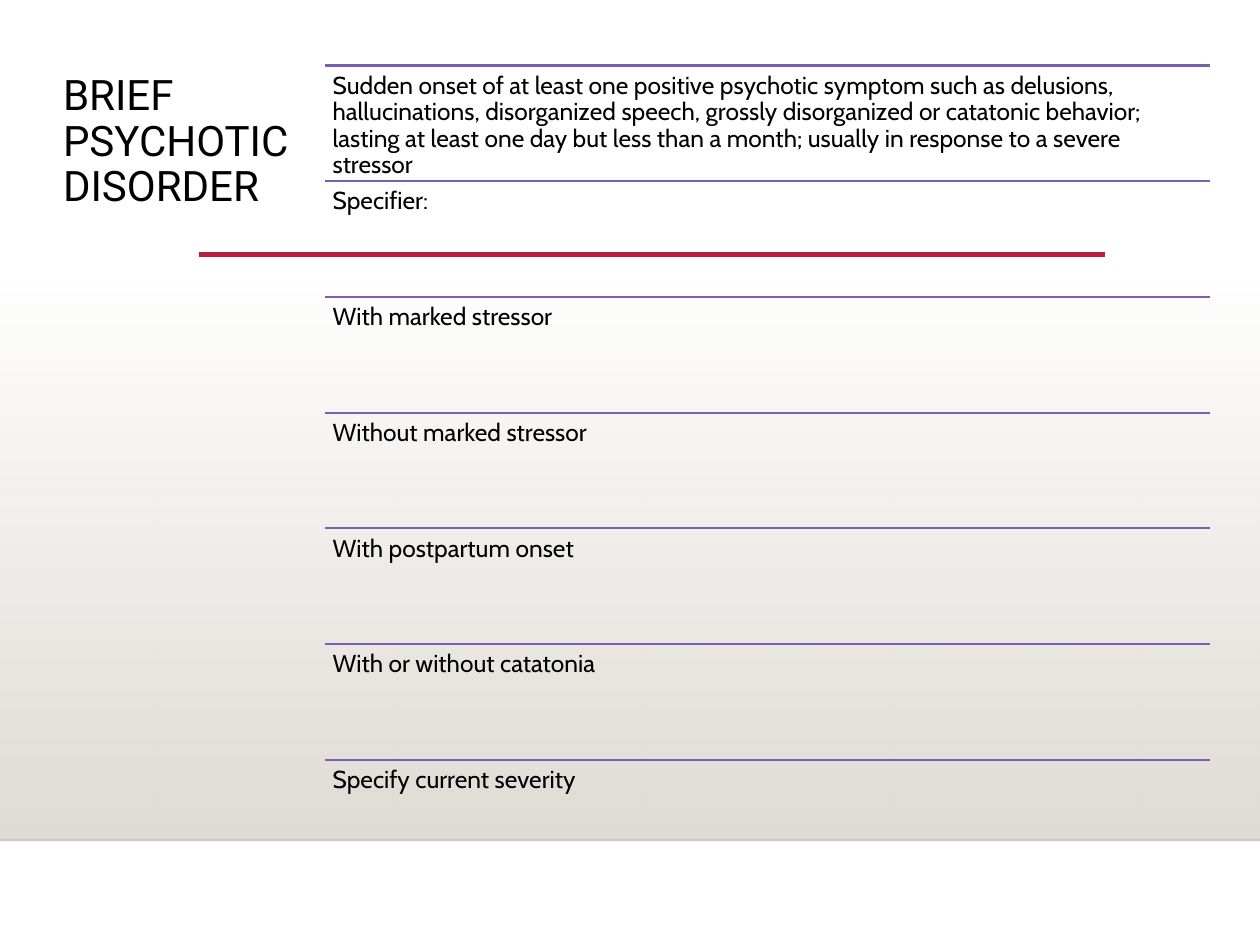
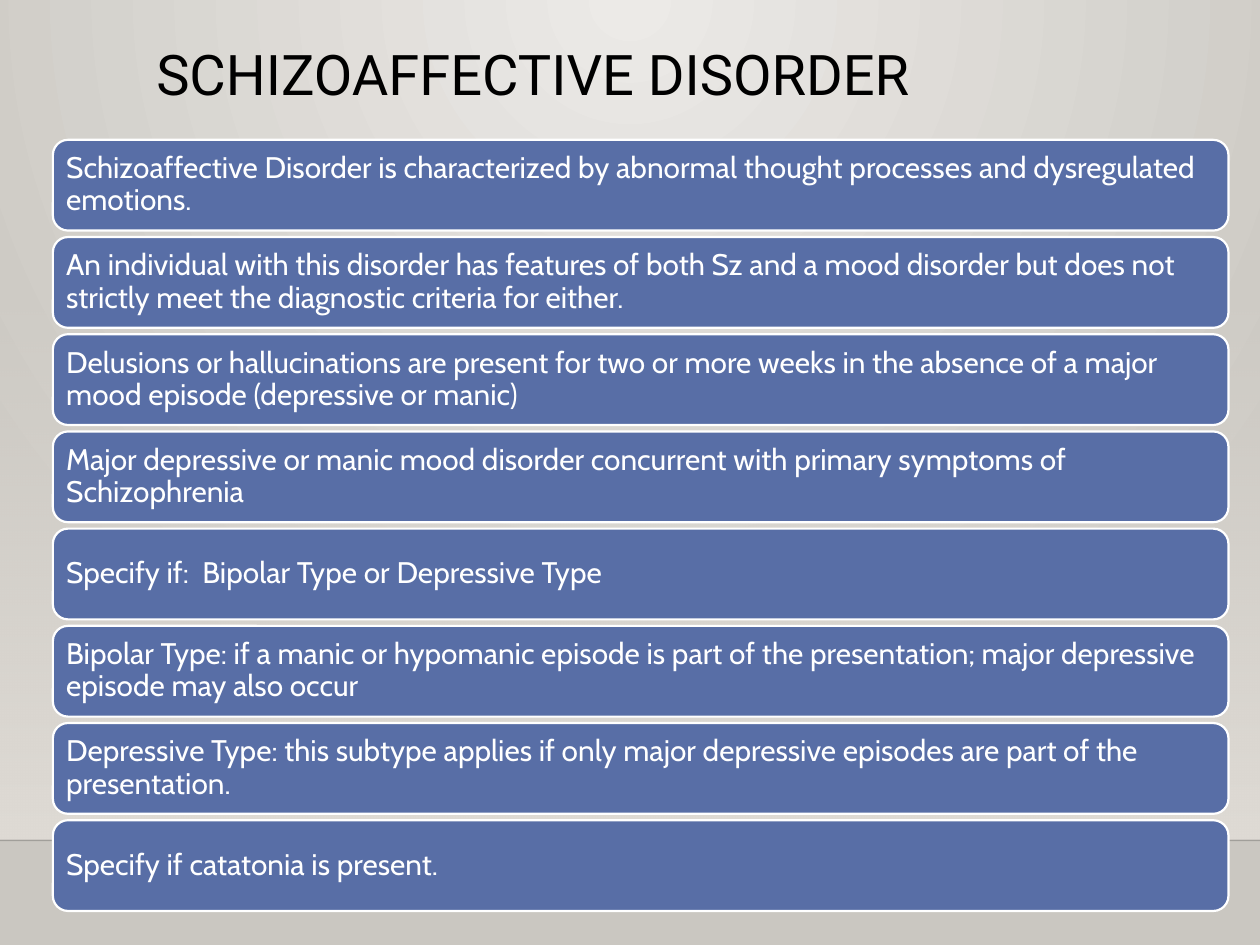
"""Build two slides on brief psychotic disorder and schizoaffective disorder."""
import lxml.etree
import pptx
import pptx.dml.color
import pptx.enum.shapes
import pptx.enum.text
import pptx.oxml.ns
import pptx.util

Inches = pptx.util.Inches
RGBColor = pptx.dml.color.RGBColor
MSO_ANCHOR = pptx.enum.text.MSO_ANCHOR
MSO_SHAPE = pptx.enum.shapes.MSO_SHAPE
qn = pptx.oxml.ns.qn

BLACK = RGBColor(0x00, 0x00, 0x00)
WHITE = RGBColor(0xFF, 0xFF, 0xFF)
STONE = RGBColor(0xDF, 0xDB, 0xD5)
GLOW = RGBColor(0xEC, 0xEA, 0xE7)
GREY = RGBColor(0xCA, 0xC7, 0xC1)
CRIMSON = RGBColor(0xB7, 0x1E, 0x42)
PURPLE = RGBColor(0x79, 0x5F, 0xAF)
BLUE = RGBColor(0x58, 0x6E, 0xA6)
TITLE_FONT = "Roboto"
BODY_FONT = "Cabin"

BRIEF_ROWS = [
    "Sudden onset of at least one positive psychotic symptom such as delusions, "
    "hallucinations, disorganized speech, grossly disorganized or catatonic behavior; "
    "lasting at least one day but less than a month; usually in response to a severe stressor",
    "Specifier:",
    "With marked stressor",
    "Without marked stressor",
    "With postpartum onset",
    "With or without catatonia",
    "Specify current severity",
]
SCHIZOAFFECTIVE_ROWS = [
    "Schizoaffective Disorder is characterized by abnormal thought processes and "
    "dysregulated emotions.",
    "An individual with this disorder has features of both Sz and a mood disorder but "
    "does not strictly meet the diagnostic criteria for either.",
    "Delusions or hallucinations are present for two or more weeks in the absence of a "
    "major mood episode (depressive or manic)",
    "Major depressive or manic mood disorder concurrent with primary symptoms of "
    "Schizophrenia",
    "Specify if:  Bipolar Type or Depressive Type",
    "Bipolar Type: if a manic or hypomanic episode is part of the presentation; major "
    "depressive episode may also occur",
    "Depressive Type: this subtype applies if only major depressive episodes are part of "
    "the presentation.",
    "Specify if catatonia is present.",
]


def write(sp, text, size, font=BODY_FONT, color=BLACK, inset=0.1, anchor=MSO_ANCHOR.TOP):
    tf = sp.text_frame
    tf.word_wrap = True
    tf.auto_size = pptx.enum.text.MSO_AUTO_SIZE.NONE
    tf.vertical_anchor = anchor
    tf.margin_left = tf.margin_right = Inches(inset)
    tf.margin_top = tf.margin_bottom = Inches(min(inset, 0.07))
    p = tf.paragraphs[0]
    p.alignment = pptx.enum.text.PP_ALIGN.LEFT
    p.line_spacing = 0.9
    r = p.add_run()
    r.text = text
    r.font.size = pptx.util.Pt(size)
    r.font.name = font
    r.font.color.rgb = color


def add_rule(s, left, right, y, color, width):
    line = s.shapes.add_connector(
        pptx.enum.shapes.MSO_CONNECTOR.STRAIGHT,
        Inches(left), Inches(y), Inches(right), Inches(y))
    line.line.color.rgb = color
    line.line.width = pptx.util.Pt(width)
    lxml.etree.SubElement(line._element.spPr, qn("a:effectLst"))
    return line


prs = pptx.Presentation()
prs.slide_width, prs.slide_height = Inches(10), Inches(7.5)
layout = prs.slide_layouts[5]
brief = prs.slides.add_slide(layout)
schizo = prs.slides.add_slide(layout)

band = brief.shapes.add_shape(
    MSO_SHAPE.RECTANGLE, 0, Inches(2.2), Inches(10), Inches(4.46))
band.shadow.inherit = False
band.line.fill.background()
band.fill.gradient()
band.fill.gradient_angle = 270
for stop in band.fill.gradient_stops:
    stop.color.rgb = STONE
floor = add_rule(brief, 0, 10, 6.67, BLACK, 1)

master_tree = prs.slide_master.shapes._spTree
for i, (sp, alpha) in enumerate([(band, "0"), (floor, "20000")]):
    el = sp._element
    color = next(el.spPr.iter(qn("a:srgbClr")))
    lxml.etree.SubElement(color, qn("a:alpha")).set("val", alpha)
    next(el.iter(qn("p:cNvPr"))).set("id", str(100 + i))
    master_tree.insert(2 + i, el)

fill = schizo.background.fill
fill.gradient()
for stop, color in zip(fill.gradient_stops, [GLOW, GREY]):
    stop.color.rgb = color
lin = next(schizo._element.iter(qn("a:lin")))
circle = lxml.etree.Element(qn("a:path"), {"path": "circle"})
lxml.etree.SubElement(
    circle, qn("a:fillToRect"), {"l": "43000", "t": "0", "r": "43000", "b": "100000"})
lin.getparent().replace(lin, circle)

for s, text, size, box in [
    (brief, "BRIEF PSYCHOTIC DISORDER", 24, (0.4, 0.52, 2.04, 5.24)),
    (schizo, "SCHIZOAFFECTIVE DISORDER", 32, (1.14, 0.3, 7.88, 1.15)),
]:
    title = s.shapes.title
    title.left, title.top, title.width, title.height = map(Inches, box)
    write(title, text, size, font=TITLE_FONT)

add_rule(brief, 1.58, 8.77, 2.02, CRIMSON, 2.5)
row_pitch = 5.51 / 6
for i, text in enumerate(BRIEF_ROWS):
    top = 0.52 + i * row_pitch
    add_rule(brief, 2.58, 9.6, top, PURPLE, 1.25)
    sp = brief.shapes.add_textbox(
        Inches(2.58), Inches(top), Inches(7.02), Inches(row_pitch))
    write(sp, text, 14, inset=0.06)

card_pitch = 5.4 / 7
for i, text in enumerate(SCHIZOAFFECTIVE_ROWS):
    sp = schizo.shapes.add_shape(
        MSO_SHAPE.ROUNDED_RECTANGLE,
        Inches(0.42), Inches(1.11 + i * card_pitch), Inches(9.33), Inches(0.72))
    sp.shadow.inherit = False
    sp.fill.solid()
    sp.fill.fore_color.rgb = BLUE
    sp.line.color.rgb = WHITE
    sp.line.width = pptx.util.Pt(1.25)
    write(sp, text, 17, color=WHITE, inset=0.07, anchor=MSO_ANCHOR.MIDDLE)

prs.save("out.pptx")
